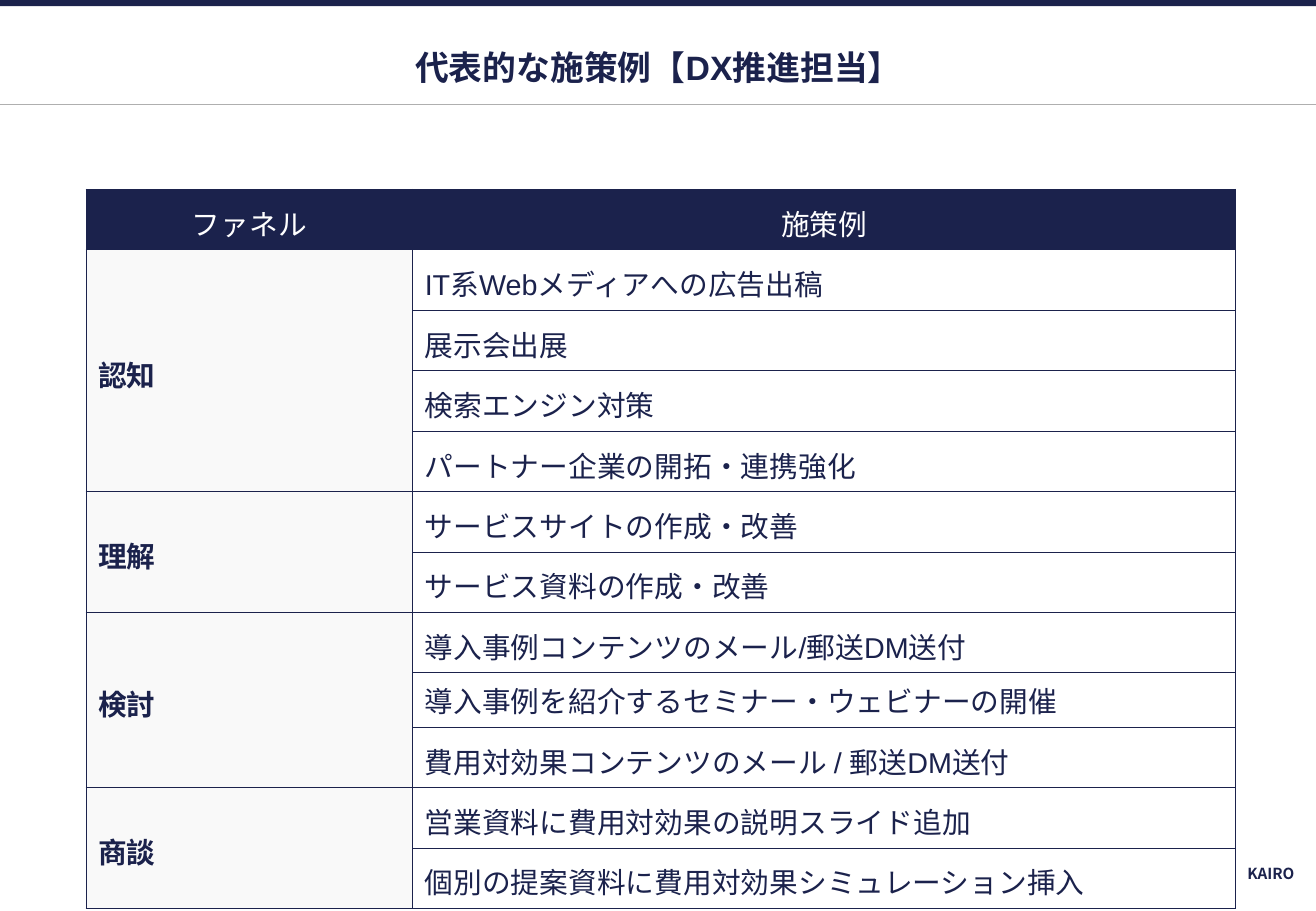
from lxml.etree import SubElement
from pptx import Presentation
from pptx.dml.color import RGBColor
from pptx.enum.shapes import MSO_CONNECTOR as Connector, MSO_SHAPE as Shape
from pptx.enum.text import MSO_ANCHOR as Anchor, MSO_AUTO_SIZE as AutoSize, PP_ALIGN as Align
from pptx.oxml.ns import qn
from pptx.util import Cm, Pt

NAVY = "1B224C"
WHITE = "FFFFFF"
LABEL_GRAY = "F9F9F9"
RULE_GRAY = "AFAFAF"
FUNNEL = [
    ("認知", ["IT系Webメディアへの広告出稿", "展示会出展", "検索エンジン対策", "パートナー企業の開拓・連携強化"]),
    ("理解", ["サービスサイトの作成・改善", "サービス資料の作成・改善"]),
    ("検討", ["導入事例コンテンツのメール/郵送DM送付", "導入事例を紹介するセミナー・ウェビナーの開催",
            "費用対効果コンテンツのメール / 郵送DM送付"]),
    ("商談", ["営業資料に費用対効果の説明スライド追加", "個別の提案資料に費用対効果シミュレーション挿入"]),
]
SINGLE_SPACED = "導入事例を紹介するセミナー・ウェビナーの開催"


def color(value):
    return RGBColor.from_string(value)


def write(frame, text, size, font_color, bold=False, align=Align.LEFT, name="Arial"):
    paragraph = frame.paragraphs[0]
    paragraph.text = text
    paragraph.alignment = align
    paragraph.font.name = name
    paragraph.font.size = Pt(size)
    paragraph.font.bold = bold
    paragraph.font.color.rgb = color(font_color)
    return paragraph


presentation = Presentation()
presentation.slide_width = Cm(27.51)
presentation.slide_height = Cm(19.05)
slide = presentation.slides.add_slide(presentation.slide_layouts[5])

top_bar = slide.shapes.add_shape(Shape.RECTANGLE, 0, 0, presentation.slide_width, Cm(0.13))
top_bar.shadow.inherit = False
top_bar.fill.solid()
top_bar.fill.fore_color.rgb = color(NAVY)
top_bar.line.fill.background()

title_rule = slide.shapes.add_connector(Connector.STRAIGHT, 0, Cm(2.18), presentation.slide_width, Cm(2.18))
title_rule.line.color.rgb = color(RULE_GRAY)
title_rule.line.width = Pt(0.75)
SubElement(title_rule._element.spPr, qn("a:effectLst"))

title = slide.shapes.title
title.left, title.top, title.width, title.height = Cm(1.75), Cm(0.86), Cm(24.03), Cm(1.07)
write(title.text_frame, "代表的な施策例【DX推進担当】", 20, NAVY, True, Align.CENTER)

footer = slide.shapes.add_textbox(Cm(23.98), Cm(18.03), Cm(3.18), Cm(0.48))
write(footer.text_frame, "KAIRO", 9, NAVY, True, Align.RIGHT, "Noto Sans CJK JP")

for frame in (title.text_frame, footer.text_frame):
    frame.auto_size = AutoSize.NONE
    frame.word_wrap = True
    frame.vertical_anchor = Anchor.MIDDLE
    frame.margin_left = frame.margin_right = frame.margin_top = frame.margin_bottom = Cm(0.1)

row_count = 1 + sum(len(measures) for stage, measures in FUNNEL)
table = slide.shapes.add_table(row_count, 2, Cm(1.8), Cm(3.96), Cm(24.03), Cm(0.82) * row_count).table
table.horz_banding = False
table.columns[0].width = Cm(6.83)
table.columns[1].width = Cm(17.2)

for cell in table.iter_cells():
    cell.vertical_anchor = Anchor.MIDDLE
    cell.margin_left = cell.margin_right = Cm(0.25)
    cell.margin_top = cell.margin_bottom = Cm(0.13)
    properties = cell._tc.get_or_add_tcPr()
    for side in ("lnL", "lnR", "lnT", "lnB"):
        border = SubElement(properties, qn(f"a:{side}"), w=str(Pt(0.75)))
        border_fill = SubElement(border, qn("a:solidFill"))
        SubElement(border_fill, qn("a:srgbClr"), val=NAVY)
    cell.fill.background()

for column, heading in enumerate(["ファネル", "施策例"]):
    cell = table.cell(0, column)
    cell.fill.solid()
    cell.fill.fore_color.rgb = color(NAVY)
    write(cell.text_frame, heading, 17, WHITE, align=Align.CENTER).line_spacing = 1.15

row = 1
for stage, measures in FUNNEL:
    stage_cell = table.cell(row, 0)
    stage_cell.merge(table.cell(row + len(measures) - 1, 0))
    stage_cell.fill.solid()
    stage_cell.fill.fore_color.rgb = color(LABEL_GRAY)
    write(stage_cell.text_frame, stage, 17, NAVY, True).line_spacing = 1.15
    for measure in measures:
        paragraph = write(table.cell(row, 1).text_frame, measure, 17, NAVY)
        paragraph.line_spacing = 1.0 if measure == SINGLE_SPACED else 1.15
        row += 1

presentation.save("out.pptx")
